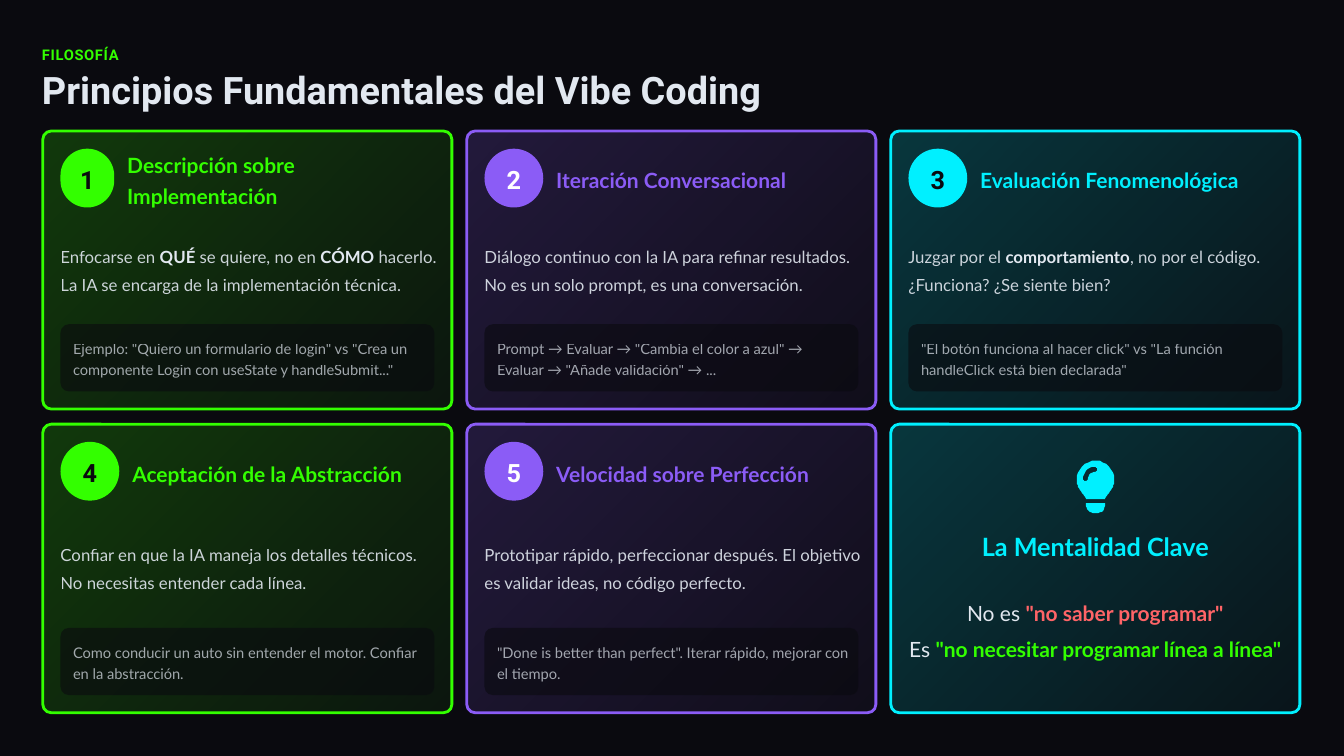
from lxml import etree
from pptx import Presentation
from pptx.dml.color import RGBColor
from pptx.enum.shapes import MSO_SHAPE
from pptx.enum.text import MSO_ANCHOR, PP_ALIGN
from pptx.oxml.ns import qn
from pptx.util import Inches, Pt

ROUNDED = MSO_SHAPE.ROUNDED_RECTANGLE
MIDDLE = MSO_ANCHOR.MIDDLE
LEFT, CENTER = PP_ALIGN.LEFT, PP_ALIGN.CENTER

DARK, LIGHT, WHITE, RED = "0A0A0F", "E2E8F0", "FFFFFF", "FF6467"
GREEN, VIOLET, CYAN = "33FF00", "8B5CF6", "00F0FF"

# The slide is a grid of 320 columns by 180 rows
COLUMNS, ROWS = 320, 180
CARD_LEFT, CARD_WIDTH, CARD_PITCH = 10.2, 97.4, 100.95
CARD_ROWS = [(31.2, 66.2), (101, 68.7)]  # top, height
PAD, BADGE, RADIUS = 4.2, 14, 2
NOTE_WIDTH, NOTE_HEIGHT, NOTE_PAD = 89, 16, 3

# Badge width, accent, number colour, title, body, note
PRINCIPLES = [
    (12.8, GREEN, DARK, "Descripción sobre Implementación",
     "Enfocarse en **QUÉ** se quiere, no en **CÓMO** hacerlo. "
     "La IA se encarga de la implementación técnica.",
     'Ejemplo: "Quiero un formulario de login" vs "Crea un componente '
     'Login con useState y handleSubmit..."'),
    (BADGE, VIOLET, WHITE, "Iteración Conversacional",
     "Diálogo continuo con la IA para refinar resultados. "
     "No es un solo prompt, es una conversación.",
     'Prompt → Evaluar → "Cambia el color a azul" → Evaluar → '
     '"Añade validación" → ...'),
    (BADGE, CYAN, DARK, "Evaluación Fenomenológica",
     "Juzgar por el **comportamiento**, no por el código. "
     "¿Funciona? ¿Se siente bien?",
     '"El botón funciona al hacer click" vs "La función handleClick '
     'está bien declarada"'),
    (BADGE, GREEN, DARK, "Aceptación de la Abstracción",
     "Confiar en que la IA maneja los detalles técnicos. "
     "No necesitas entender cada línea.",
     "Como conducir un auto sin entender el motor. "
     "Confiar en la abstracción."),
    (BADGE, VIOLET, WHITE, "Velocidad sobre Perfección",
     "Prototipar rápido, perfeccionar después. "
     "El objetivo es validar ideas, no código perfecto.",
     '"Done is better than perfect". Iterar rápido, mejorar con el tiempo.'),
]

# Bulb contours in hundredths of an inch: a start point, then line ends
# (two numbers) or cubic curves (six numbers)
BULB = [
    [(28, 38), (29, 35, 30, 34, 32, 32), (35, 28, 37, 24, 37, 19),
     (37, 9, 29, 0, 19, 0), (8, 0, 0, 9, 0, 19), (0, 24, 2, 28, 5, 32),
     (7, 34, 8, 35, 9, 38)],
    [(28, 42), (9, 42), (9, 44), (9, 48, 13, 52, 17, 52), (20, 52),
     (24, 52, 28, 48, 28, 44)],
    [(18, 11), (14, 11, 11, 14, 11, 18), (11, 19, 10, 20, 8, 20),
     (7, 20, 6, 19, 6, 18), (6, 12, 11, 6, 18, 6), (19, 6, 20, 7, 20, 9),
     (20, 10, 19, 11, 18, 11)],
]


def color(value):
    return RGBColor.from_string(value)


def paint(fill, value, *alphas):
    """Fill solid, or as a diagonal gradient when two opacities are given."""
    if len(alphas) == 2:
        fill.gradient()
        fill.gradient_angle = 315
        for stop in fill.gradient_stops:
            stop.color.rgb = color(value)
    else:
        fill.solid()
        fill.fore_color.rgb = color(value)
    for node, alpha in zip(fill._xPr.iter(qn("a:srgbClr")), alphas):
        etree.SubElement(node, qn("a:alpha")).set("val", str(alpha * 1000))


def write(frame, text, *, size, ink, font="Lato", bold=False, strong=LIGHT,
          alpha=100, spacing=1.2, align=LEFT, tracking=0):
    """Add one paragraph; parts between ** are bold in the strong colour."""
    para = frame.paragraphs[0]
    if para.runs:
        para = frame.add_paragraph()
    para.line_spacing, para.alignment = spacing, align
    for index, part in enumerate(text.split("**")):
        if not part:
            continue
        marked = index % 2 == 1
        span = para.add_run()
        span.text = part
        span.font.name, span.font.size = font, Pt(size)
        span.font.bold = bold or marked
        opacity = [alpha] if alpha < 100 and not marked else []
        paint(span.font.fill, strong if marked else ink, *opacity)
        if tracking:
            span.font._element.set("spc", str(int(tracking * 100)))


def curve_points(start, curve, steps=8):
    ends = [start, curve[:2], curve[2:4], curve[4:]]
    for step in range(1, steps + 1):
        t = step / steps
        weights = ((1 - t) ** 3, 3 * t * (1 - t) ** 2,
                   3 * t * t * (1 - t), t ** 3)
        yield tuple(sum(w * end[axis] for w, end in zip(weights, ends))
                    for axis in (0, 1))


class Page:
    def __init__(self, deck):
        self.unit_x = deck.slide_width / COLUMNS
        self.unit_y = deck.slide_height / ROWS
        self.slide = deck.slides.add_slide(deck.slide_layouts[6])
        paint(self.slide.background.fill, DARK)

    def place(self, left, top, width, height):
        return (round(left * self.unit_x), round(top * self.unit_y),
                round(width * self.unit_x), round(height * self.unit_y))

    def bare_frame(self, shape):
        frame = shape.text_frame
        frame.word_wrap = True
        frame.vertical_anchor = MIDDLE
        frame.margin_left = frame.margin_right = 0
        frame.margin_top = frame.margin_bottom = 0
        return frame

    def text(self, area, *lines, **style):
        box = self.slide.shapes.add_textbox(*self.place(*area))
        frame = self.bare_frame(box)
        for line in lines:
            write(frame, line, **style)
        return frame

    def panel(self, area, fill, *alphas, radius=RADIUS, outline=None):
        shape = self.slide.shapes.add_shape(ROUNDED, *self.place(*area))
        shape.shadow.inherit = False
        shape.adjustments[0] = radius / min(area[2:])
        paint(shape.fill, fill, *alphas)
        if outline:
            paint(shape.line.fill, outline)
            shape.line.width = Pt(2)
        else:
            shape.line.fill.background()
        return shape

    def card(self, index, accent):
        row, column = divmod(index, 3)
        top, height = CARD_ROWS[row]
        left = CARD_LEFT + column * CARD_PITCH
        self.panel((left, top, CARD_WIDTH, height), accent, 20, 5,
                   outline=accent)
        return left, top, height

    def principle(self, index, badge_width, accent, ink, title, body, note):
        left, top, height = self.card(index, accent)
        inner, head = left + PAD, top + PAD
        # Numbered badge and title
        badge = self.panel((inner, head, badge_width, BADGE), accent,
                           radius=BADGE / 2)
        write(self.bare_frame(badge), str(index + 1), size=18, ink=ink,
              font="Roboto", bold=True, spacing=1.1, align=CENTER)
        self.text((inner + badge_width + 3.1, head, 75.8, BADGE), title,
                  size=15, ink=accent, bold=True)
        # Body and example note
        self.text((inner, top + 21.4, 91, height - 44.4), body,
                  size=12, ink=LIGHT, alpha=90, spacing=1.4)
        note_top = top + height - 20.2
        self.panel((inner, note_top, NOTE_WIDTH, NOTE_HEIGHT), DARK, 60)
        self.text((inner + NOTE_PAD, note_top + NOTE_PAD, 84.8, 10), note,
                  size=10.5, ink=LIGHT, alpha=70)

    def bulb(self, left, top, fill):
        builder = self.slide.shapes.build_freeform(
            *BULB[0][0], scale=Inches(0.01))
        for number, (start, *segments) in enumerate(BULB):
            if number:
                builder.move_to(*start)
            points = [start]
            for segment in segments:
                points += ([segment] if len(segment) == 2
                           else curve_points(points[-1], segment))
            builder.add_line_segments(points[1:], close=True)
        shape = builder.convert_to_shape(round(left * self.unit_x),
                                         round(top * self.unit_y))
        shape.shadow.inherit = False
        paint(shape.fill, fill)
        shape.line.fill.background()

    def mindset(self, index):
        left, top, _ = self.card(index, CYAN)
        self.bulb(left + 44.3, top + 8.7, CYAN)
        self.text((left, top + 24.7, CARD_WIDTH, 8), "La Mentalidad Clave",
                  size=18, ink=CYAN, bold=True, spacing=1.1, align=CENTER)
        style = dict(size=15, ink=LIGHT, spacing=1.4, align=CENTER)
        frame = self.text((left + 3, top + 35.8, 91.4, 24.5),
                          'No es **"no saber programar"**', strong=RED, **style)
        write(frame, 'Es **"no necesitar programar línea a línea"**',
              strong=GREEN, **style)


def main():
    deck = Presentation()
    deck.slide_width, deck.slide_height = Inches(13.33), Inches(7.5)
    page = Page(deck)
    # Heading
    page.text((10, 10, 302, 5), "FILOSOFÍA", size=10.5, ink=GREEN,
              font="Roboto", bold=True, tracking=0.5)
    page.text((10, 17, 304, 10), "Principios Fundamentales del Vibe Coding",
              size=27, ink=LIGHT, font="Roboto", bold=True, spacing=0.9)
    # Cards
    for index, principle in enumerate(PRINCIPLES):
        page.principle(index, *principle)
    page.mindset(len(PRINCIPLES))
    deck.save("out.pptx")


if __name__ == "__main__":
    main()
